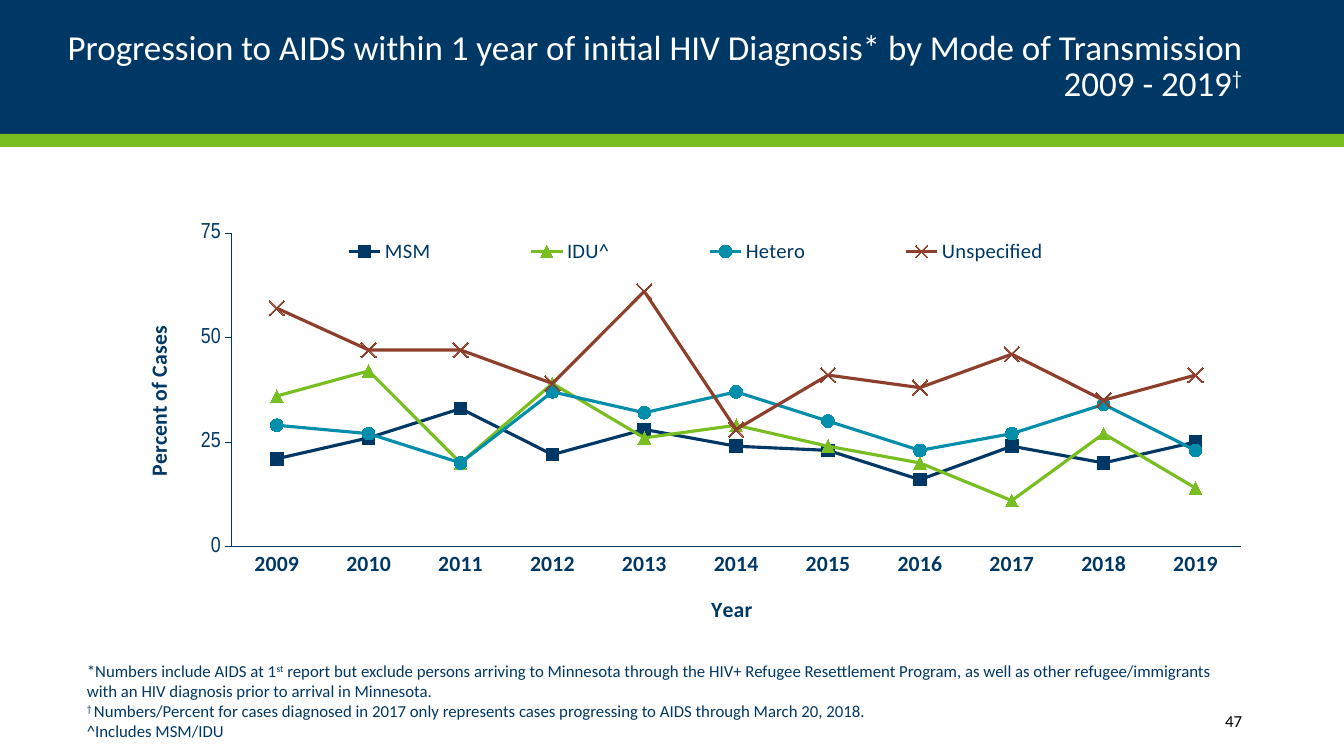
from lxml import etree
from pptx import Presentation
from pptx.chart.data import CategoryChartData as ChartData
from pptx.dml.color import RGBColor
from pptx.enum.chart import XL_CHART_TYPE as Kind, XL_LEGEND_POSITION as Place
from pptx.enum.chart import XL_MARKER_STYLE as Mark, XL_TICK_MARK as Tick
from pptx.enum.shapes import MSO_SHAPE as Shape
from pptx.enum.text import MSO_ANCHOR as Anchor, PP_ALIGN as Align
from pptx.oxml.ns import qn
from pptx.util import Emu, Pt

PX = 914400 / 100.8
NAVY, GREEN, TEAL, RUST = "003865", "78BE21", "008EAA", "8D3F2B"
WHITE, BLACK = "FFFFFF", "000000"
rgb = RGBColor.from_string


def box(*nums):
    return [Emu(round(n * PX)) for n in nums]


def lay(node, slot, **vals):
    """Give a chart part a manual layout, as shares of the chart."""
    for old in node.findall(qn("c:layout")):
        node.remove(old)
    outer = etree.Element(qn("c:layout"))
    man = etree.SubElement(outer, qn("c:manualLayout"))
    for tag, val in vals.items():
        etree.SubElement(man, qn("c:" + tag)).set("val", str(val))
    node.insert(slot, outer)


deck = Presentation()
deck.slide_width, deck.slide_height = box(1344, 756)
slide = deck.slides.add_slide(deck.slide_layouts[6])

# Header bands
for top, high, color in [(0, 134, NAVY), (134, 13, GREEN)]:
    band = slide.shapes.add_shape(Shape.RECTANGLE, *box(0, top, 1344, high))
    band.shadow.inherit = False
    band.fill.solid()
    band.fill.fore_color.rgb = rgb(color)
    band.line.fill.background()

# Title, footnotes and page number; each run is (text, raised)
texts = [
    ((45, 17, 1207, 101), 25, WHITE, Align.RIGHT, 0.85, [
        [("Progression to AIDS within 1 year of initial HIV Diagnosis* "
          "by Mode of Transmission", False), ("\n", False),
         ("2009 - 2019", False), ("†", True)]]),
    ((77, 660, 1175, 82), 12, NAVY, Align.LEFT, 1.0, [
        [("*Numbers include AIDS at 1", False), ("st", True),
         (" report but exclude persons arriving to Minnesota through the HIV+ "
          "Refugee Resettlement Program, as well as other refugee/immigrants "
          "with an HIV diagnosis prior to arrival in Minnesota.", False)],
        [("† ", True),
         ("Numbers/Percent for cases diagnosed in 2017 only represents cases "
          "progressing to AIDS through March 20, 2018.", False)],
        [("^Includes MSM/IDU", False)]]),
    ((1091, 701, 161, 40), 12, BLACK, Align.RIGHT, 1.0, [[("47", False)]]),
]
for spot, size, color, align, space, paras in texts:
    frame = slide.shapes.add_textbox(*box(*spot)).text_frame
    frame.word_wrap = True
    frame.vertical_anchor = Anchor.MIDDLE
    frame.margin_top = frame.margin_bottom = 0
    for i, runs in enumerate(paras):
        para = frame.add_paragraph() if i else frame.paragraphs[0]
        para.alignment, para.line_spacing = align, space
        for words, raised in runs:
            if words == "\n":
                para.add_line_break()
                continue
            run = para.add_run()
            run.text = words
            run.font.name, run.font.size = "Calibri", Pt(size)
            run.font.color.rgb = rgb(color)
            if raised:
                run._r.get_or_add_rPr().set("baseline", "30000")

# Chart data
lines = [
    ("MSM", NAVY, Mark.SQUARE, 9, (21, 26, 33, 22, 28, 24, 23, 16, 24, 20, 25)),
    ("IDU^", GREEN, Mark.TRIANGLE, 9, (36, 42, 20, 39, 26, 29, 24, 20, 11, 27, 14)),
    ("Hetero", TEAL, Mark.CIRCLE, 9, (29, 27, 20, 37, 32, 37, 30, 23, 27, 34, 23)),
    ("Unspecified", RUST, Mark.X, 11, (57, 47, 47, 39, 61, 28, 41, 38, 46, 35, 41)),
]
data = ChartData()
data.categories = [str(year) for year in range(2009, 2020)]
for name, color, mark, size, vals in lines:
    data.add_series(name, vals)
chart = slide.shapes.add_chart(
    Kind.LINE_MARKERS, *box(93, 170, 1159, 480), data).chart
chart.has_title = False
chart.font.name, chart.font.size = "Arial Narrow", Pt(17.5)
chart.font.bold, chart.font.color.rgb = True, rgb(NAVY)
plot = chart.plots[0]
plot.vary_by_categories = False
lay(chart._chartSpace.chart.plotArea, 0, layoutTarget="inner", xMode="edge",
    yMode="edge", x=0.119, y=0.131, w=0.872, h=0.654)

# Series
for line, (name, color, mark, size, vals) in zip(plot.series, lines):
    line.smooth = False
    line.format.line.color.rgb = rgb(color)
    line.format.line.width = Pt(2.25)
    line.marker.style, line.marker.size = mark, size
    look = line.marker.format
    look.line.color.rgb = rgb(color)
    if mark == Mark.X:
        look.fill.background()
    else:
        look.fill.solid()
        look.fill.fore_color.rgb = rgb(color)

# Axes
years, cases = chart.category_axis, chart.value_axis
cases.minimum_scale, cases.maximum_scale, cases.major_unit = 0, 75, 25
for axis, title, face, bold, tick, turn, x, y in [
    (years, "Year", "Calibri", True, Tick.NONE, 0, 0.53, 0.875),
    (cases, "Percent of Cases", "Arial Narrow", False, Tick.OUTSIDE,
     -5400000, 0.04, 0.317),
]:
    axis.has_major_gridlines = False
    axis.major_tick_mark, axis.minor_tick_mark = tick, Tick.NONE
    axis.format.line.color.rgb = rgb(NAVY)
    axis.format.line.width = Pt(0.25)
    font = axis.tick_labels.font
    font.name, font.size, font.bold = face, Pt(15.5), bold
    font.color.rgb = rgb(NAVY)
    frame = axis.axis_title.text_frame
    frame._txBody.bodyPr.set("rot", str(turn))
    run = frame.paragraphs[0].add_run()
    run.text = title
    run.font.name, run.font.size, run.font.bold = "Calibri", Pt(15.5), True
    run.font.color.rgb = rgb(NAVY)
    lay(axis.axis_title._element, 1, xMode="edge", yMode="edge", x=x, y=y)

# Legend
chart.has_legend = True
key = chart.legend
key.position, key.include_in_layout = Place.RIGHT, False
key.font.name, key.font.size, key.font.bold = "Calibri", Pt(14.7), False
key.font.color.rgb = rgb(NAVY)
lay(key._element, 1, xMode="edge", yMode="edge", x=0.14, y=0.13, w=0.76, h=0.08)

deck.save("out.pptx")
